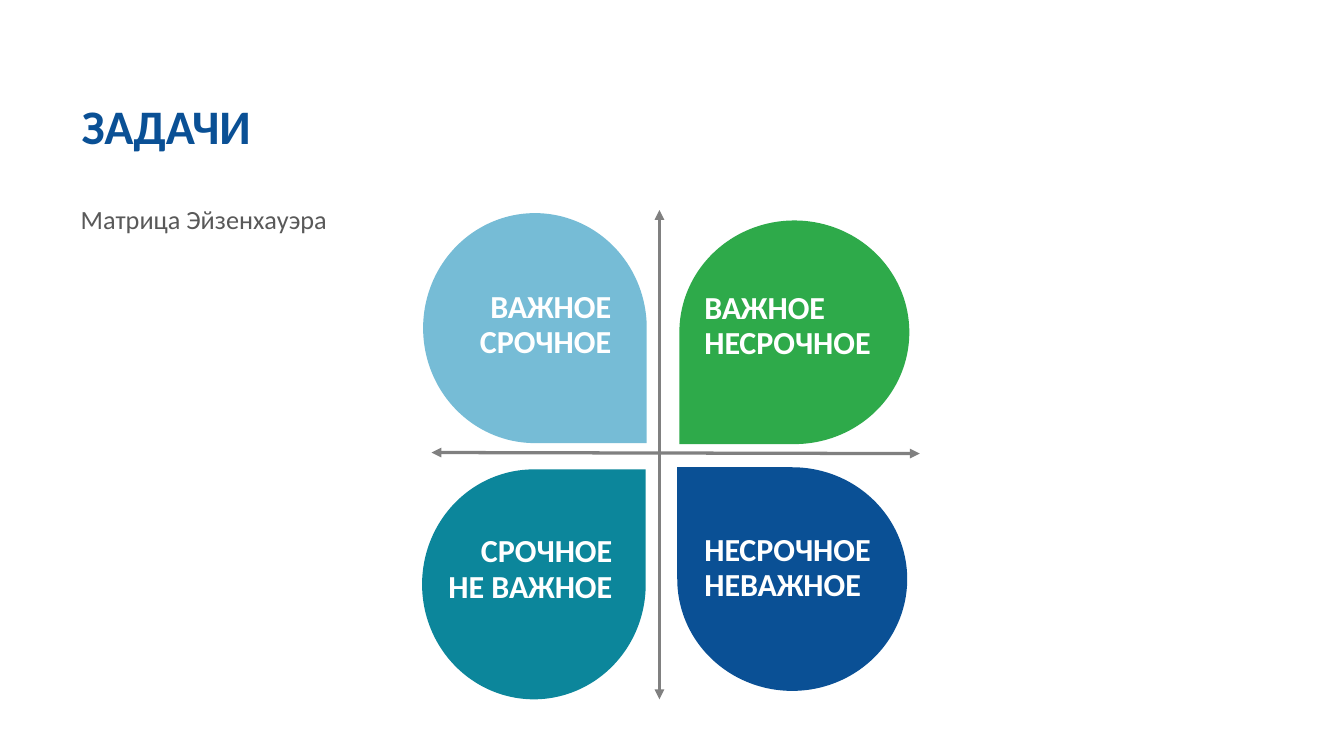
from lxml import etree
from pptx import Presentation
from pptx.dml.color import RGBColor
from pptx.enum import shapes, text
from pptx.oxml import ns
from pptx.util import Inches, Pt

FONT = "Calibri"
BLUE = "0A5095"
GREY = "808080"
WHITE = "FFFFFF"
LEFT = text.PP_ALIGN.LEFT
RIGHT = text.PP_ALIGN.RIGHT


def color(hex_value):
    return RGBColor.from_string(hex_value)


def add_text(slide, place, lines, size=22, fill=WHITE, bold=True,
             spacing=24, align=LEFT):
    label = slide.shapes.add_textbox(*map(Inches, place))
    frame = label.text_frame
    frame.word_wrap = True
    frame.auto_size = text.MSO_AUTO_SIZE.SHAPE_TO_FIT_TEXT
    for index, line in enumerate(lines):
        paragraph = frame.add_paragraph() if index else frame.paragraphs[0]
        paragraph.alignment = align
        paragraph.line_spacing = Pt(spacing)
        run = paragraph.add_run()
        run.text = line
        run.font.name = FONT
        run.font.size = Pt(size)
        run.font.bold = bold
        run.font.color.rgb = color(fill)


def add_petal(slide, left, top, fill, rotation=0, flipped=False):
    petal = slide.shapes.add_shape(
        shapes.MSO_SHAPE.TEAR, *map(Inches, (left, top, 2.13, 2.19)))
    petal.shadow.inherit = False
    petal.fill.solid()
    petal.fill.fore_color.rgb = color(fill)
    petal.line.fill.background()
    petal.rotation = rotation
    if flipped:
        petal._element.spPr.find(ns.qn("a:xfrm")).set("flipV", "1")


def add_axis(slide, start, end):
    axis = slide.shapes.add_connector(
        shapes.MSO_CONNECTOR.STRAIGHT, *map(Inches, start + end))
    axis.line.color.rgb = color(GREY)
    axis.line.width = Pt(2.25)
    outline = axis.line._get_or_add_ln()
    for tip in ("a:headEnd", "a:tailEnd"):
        etree.SubElement(outline, ns.qn(tip), type="triangle")
    etree.SubElement(axis._element.spPr, ns.qn("a:effectLst"))


def main():
    deck = Presentation()
    deck.slide_width = Inches(12.8)
    deck.slide_height = Inches(7.2)
    slide = deck.slides.add_slide(deck.slide_layouts[6])

    add_text(slide, (0.68, 0.96, 2.6, 0.57), ["ЗАДАЧИ"],
             size=33, fill=BLUE, spacing=33)

    add_petal(slide, 4.02, 4.47, "0C869B")
    add_petal(slide, 6.48, 4.42, BLUE, rotation=270)
    add_petal(slide, 6.5, 2.07, "2EAA4A", rotation=90, flipped=True)
    add_petal(slide, 4.03, 2.03, "76BCD6", flipped=True)

    quadrants = [
        (3.86, 2.71, RIGHT, ["ВАЖНОЕ", "СРОЧНОЕ"]),
        (6.61, 2.72, LEFT, ["ВАЖНОЕ", "НЕСРОЧНОЕ"]),
        (3.87, 5.04, RIGHT, ["СРОЧНОЕ", "НЕ ВАЖНОЕ"]),
        (6.61, 5.03, LEFT, ["НЕСРОЧНОЕ", "НЕВАЖНОЕ"]),
    ]
    for left, top, align, lines in quadrants:
        add_text(slide, (left, top, 2.06, 0.78), lines, align=align)

    add_text(slide, (0.67, 1.91, 2.83, 0.38), ["Матрица Эйзенхауэра"],
             size=18, fill="595959", bold=False, spacing=20)

    add_axis(slide, (6.28, 2), (6.28, 6.66))
    add_axis(slide, (4.11, 4.31), (8.76, 4.32))

    deck.save("out.pptx")


if __name__ == "__main__":
    main()
